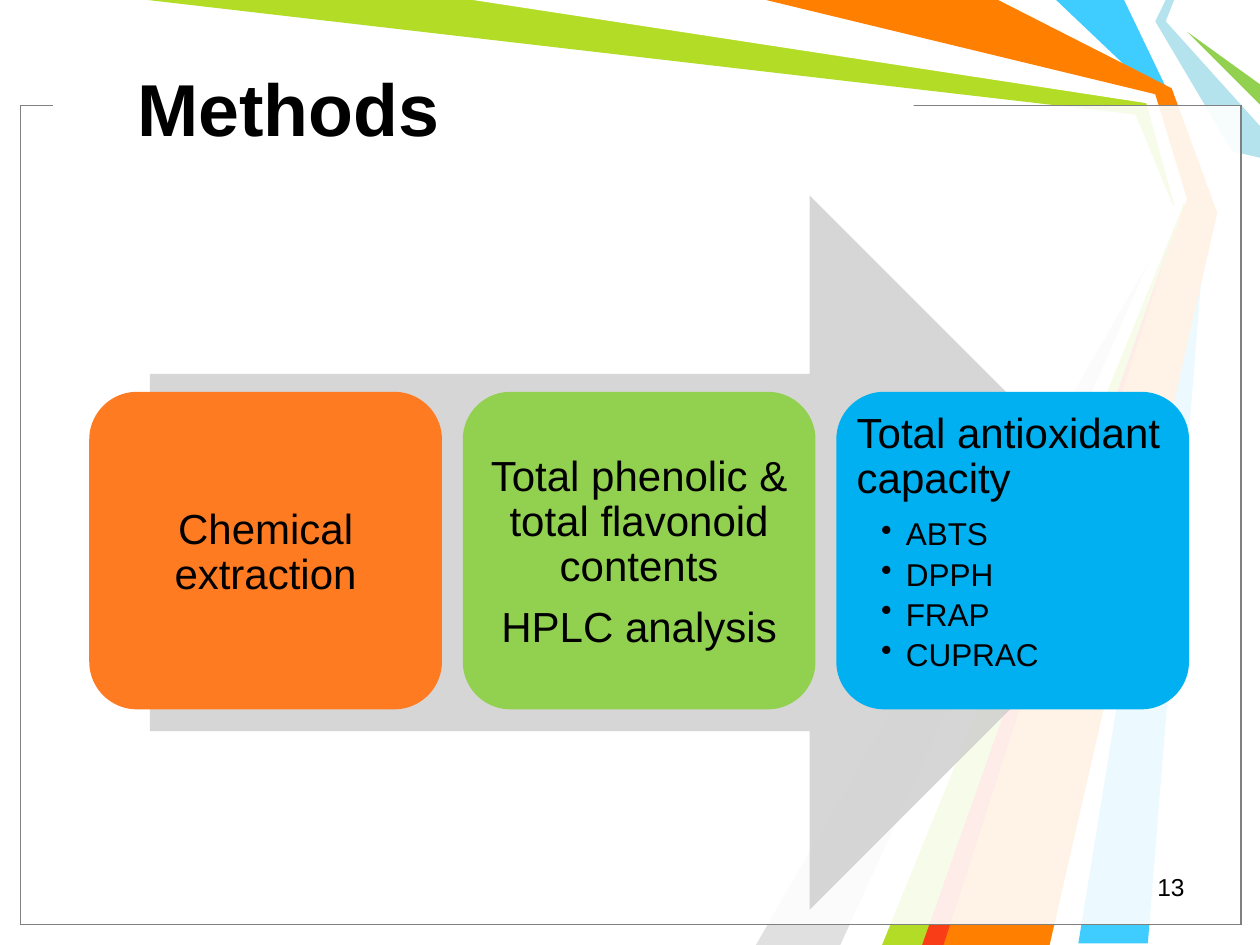
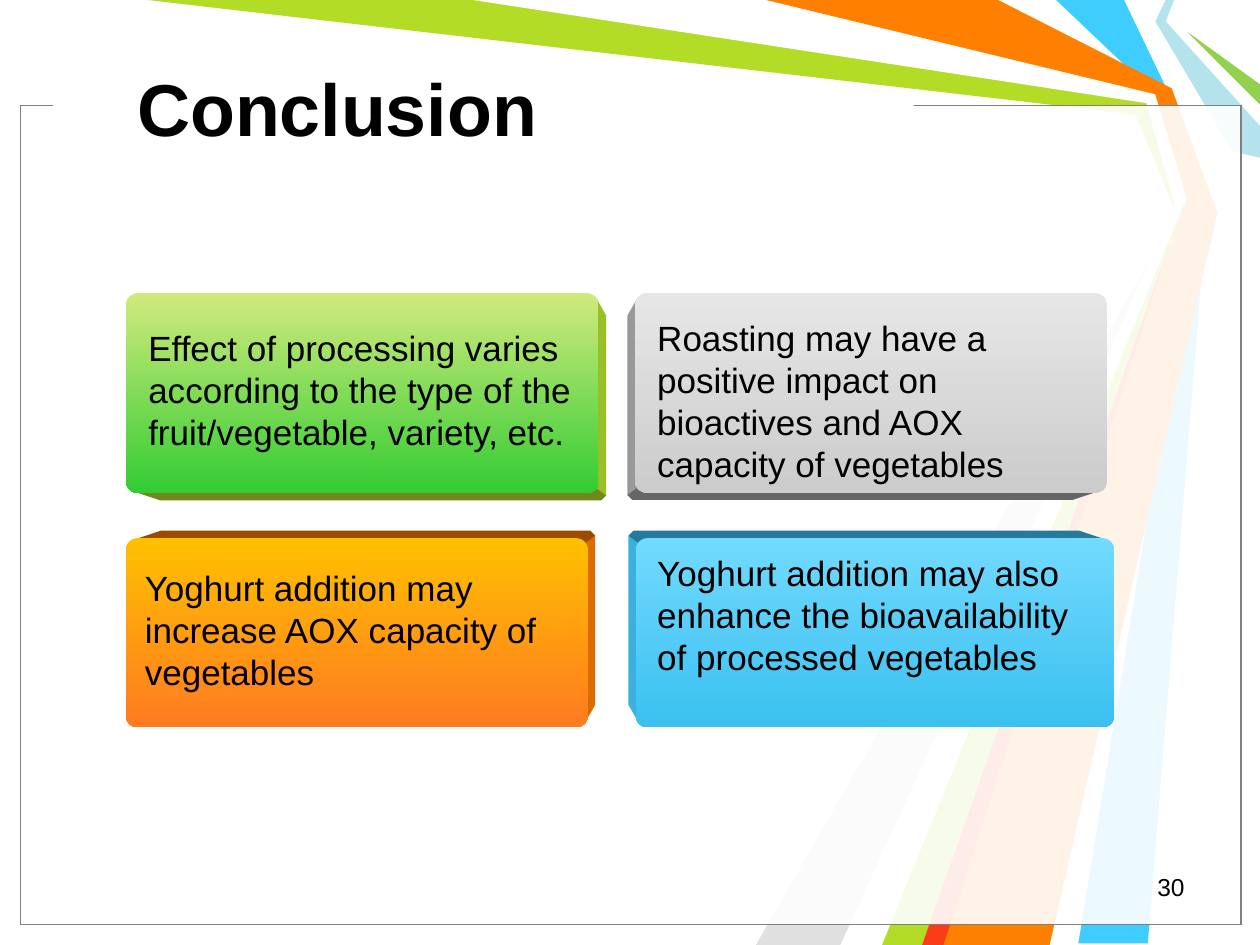
import pptx
import pptx.util
import pptx.dml.color
import pptx.enum.shapes
import pptx.enum.text
import pptx.oxml.ns
from lxml import etree

Cm = pptx.util.Cm
Pt = pptx.util.Pt
Shape = pptx.enum.shapes.MSO_SHAPE
Align = pptx.enum.text.PP_ALIGN
Anchor = pptx.enum.text.MSO_ANCHOR
qn = pptx.oxml.ns.qn


def paint(target, *colors, alpha=None):
    """Fill a shape, line or font with one colour, or two as a downward gradient."""
    rgbs = [pptx.dml.color.RGBColor.from_string(color) for color in colors]
    if len(rgbs) == 2:
        target.fill.gradient()
        target.fill.gradient_angle = 270
        for stop, rgb in zip(target.fill.gradient_stops, rgbs):
            stop.color.rgb = rgb
    else:
        target.fill.solid()
        target.fill.fore_color.rgb = rgbs[0]
    if alpha is not None:
        color_element = target._element.spPr.find(".//" + qn("a:srgbClr"))
        etree.SubElement(color_element, qn("a:alpha"), val=str(alpha * 1000))
    if hasattr(target, "shadow"):
        target.shadow.inherit = False
        target.line.fill.background()


def write(paragraph, text, size, align=Align.LEFT, bold=False):
    paragraph.text = text
    paragraph.alignment = align
    for run in paragraph.runs:
        run.font.name = "Arial"
        run.font.size = Pt(size)
        run.font.bold = bold
        paint(run.font, "000000")


presentation = pptx.Presentation()
presentation.slide_width, presentation.slide_height = Cm(25.4), Cm(19.05)
layout = presentation.slide_layouts[5]

# Titles and page numbers
slides = []
for title_text, number in [("Methods", "13"), ("Conclusion", "30")]:
    slide = presentation.slides.add_slide(layout)
    title = slide.shapes.title
    title.left, title.top, title.width, title.height = Cm(2.51), Cm(0.56), Cm(17.5), Cm(3.18)
    title.text_frame.vertical_anchor = Anchor.MIDDLE
    write(title.text_frame.paragraphs[0], title_text, 42, bold=True)
    number_box = slide.shapes.add_textbox(Cm(18.21), Cm(17.45), Cm(5.92), Cm(0.84))
    number_box.text_frame.word_wrap = True
    write(number_box.text_frame.paragraphs[0], number, 14, Align.RIGHT)
    slides.append(slide)
methods, conclusion = slides

# Background ribbons, from back to front
ribbons = [
    ("3FCDFF", [(22.66, 0), (23.6, 1.96), (24.33, 4.24), (23.14, 19.02),
                (21.74, 19.02), (24.13, 4.24), (23.29, 1.9), (21.29, 0)]),
    ("B3DC27", [(2.97, 0), (9.73, 0), (23.22, 1.98), (23.93, 4.29),
                (18.85, 19.05), (17.58, 19.05), (23.75, 4.39), (22.89, 2.31)]),
    ("E0E0E0", [(16.94, 19.05), (23.55, 4.6), (15.24, 19.05)]),
    ("FFFFFF", [(9.53, 0), (23.11, 2.08), (23.67, 4.11), (17.15, 19.05),
                (17.78, 19.05), (23.9, 4.01), (23.29, 1.9), (15.24, 0)]),
    ("B4E3EE", [(23.5, 0), (23.29, 0.43), (24.84, 3.05), (25.4, 3.18),
                (25.4, 2.54), (23.5, 0.43), (23.67, 0)]),
    ("92D050", [(25.4, 2.11), (23.93, 0.64), (25.4, 1.7)]),
    ("FF7F00", [(15.44, 0), (20.12, 0), (23.62, 1.78), (24.54, 4.29),
                (21.16, 19.05), (18.62, 19.05), (23.93, 4.01), (23.29, 1.9)]),
    ("F93D17", [(18.59, 19.05), (23.67, 4.65), (19.02, 19.05)]),
]
background = []
for color, outline in ribbons:
    points = [(Cm(x), Cm(y)) for x, y in outline]
    builder = methods.shapes.build_freeform(*points[0], scale=1.0)
    builder.add_line_segments(points[1:], close=True)
    ribbon = builder.convert_to_shape()
    paint(ribbon, color)
    background.append(ribbon)

# Two translucent frames, with a gap in their top edge for the title
for line_color in ("000000", "808080"):
    frame = methods.shapes.add_shape(Shape.RECTANGLE, Cm(0.41), Cm(2.13), Cm(24.61), Cm(16.51))
    paint(frame, "FFFFFF", alpha=69)
    paint(frame.line, line_color)
    frame.line.width = Pt(0.75)
    background.append(frame)
title_gap = methods.shapes.add_shape(Shape.RECTANGLE, Cm(1.07), Cm(1.88), Cm(17.35), Cm(0.43))
paint(title_gap, "FFFFFF")
background.append(title_gap)

# Move the background into the layout, so that both slides share it
for position, shape in enumerate(background, start=2):
    layout.shapes._spTree.insert(position, shape._element)

# Methods: process arrow
arrow = methods.shapes.add_shape(Shape.RIGHT_ARROW, Cm(3.02), Cm(3.94), Cm(20.5), Cm(14.4))
paint(arrow, "CCCCCC", alpha=79)

# Methods: three steps, each with its headings and its bullets
steps = [
    ("FF7B21", ["Chemical extraction"], []),
    ("92D050", ["Total phenolic & total flavonoid contents", "HPLC analysis"], []),
    ("00B0F0", ["Total antioxidant capacity"], ["ABTS", "DPPH", "FRAP", "CUPRAC"]),
]
for index, (color, headings, bullets) in enumerate(steps):
    step = methods.shapes.add_shape(
        Shape.ROUNDED_RECTANGLE, Cm(1.8 + 7.53 * index), Cm(7.9), Cm(7.11), Cm(6.4))
    step.adjustments[0] = 0.15
    paint(step, color)
    text_frame = step.text_frame
    text_frame.word_wrap = True
    text_frame.vertical_anchor = Anchor.TOP if bullets else Anchor.MIDDLE
    text_frame.margin_left = text_frame.margin_right = Cm(0.13)
    text_frame.margin_top, text_frame.margin_bottom = Cm(0.13), Cm(0.02)
    for row, text in enumerate(headings + bullets):
        paragraph = text_frame.add_paragraph() if row else text_frame.paragraphs[0]
        is_bullet = row >= len(headings)
        if is_bullet:
            properties = paragraph._p.get_or_add_pPr()
            properties.set("marL", str(Cm(0.99)))
            properties.set("indent", str(-Cm(0.5)))
            etree.SubElement(properties, qn("a:buChar"), char="•")
        paragraph.line_spacing = 0.9
        paragraph.space_after = Pt(3.5 if is_bullet else 9)
        write(paragraph, text, 18 if is_bullet else 24, Align.LEFT if bullets else Align.CENTER)

# Conclusion: cards as (left, top, width, height), gradient, direction of the depth,
# colours of the upright and level depth faces, text place and text
cards = [
    ((2.54, 5.91, 9.53, 4.03), ("D1EA7D", "33CC33"), (1, 1), ("98BF23", "6E8A1C"),
     (2.74, 6.45, 9.3), "Effect of processing varies according to the type of the "
     "fruit/vegetable, variety, etc."),
    ((12.8, 5.91, 9.52, 4.02), ("E6E6E6", "CCCCCC"), (-1, 1), ("999999", "666666"),
     (13.0, 6.25, 9), "Roasting may have a positive impact on bioactives and AOX "
     "capacity of vegetables"),
    ((2.54, 10.85, 9.31, 3.81), ("FFC000", "FF7B21"), (1, -1), ("DD6C00", "994B00"),
     (2.67, 11.3, 9.17), "Yoghurt addition may increase AOX capacity of vegetables"),
    ((12.82, 10.85, 9.64, 3.81), ("71DAFF", "3BC0EF"), (-1, -1), ("3AB0DC", "267A99"),
     (13.0, 11.0, 9.02), "Yoghurt addition may also enhance the bioavailability of "
     "processed vegetables"),
]
depth, radius = 0.15, 0.22
for (left, top, width, height), gradient, (across, down), face_colors, place, text in cards:
    # The near corner is the one the depth shows at; the far corner is opposite
    near_x, far_x = (left + width, left) if across > 0 else (left, left + width)
    near_y, far_y = (top + height, top) if down > 0 else (top, top + height)
    outer_x, outer_y = near_x + across * depth, near_y + down * depth
    inner = (near_x - across * radius, near_y - down * radius)
    upright = [(near_x - across * 0.05, far_y + down * 0.1), (outer_x, far_y + down * 0.45),
               (outer_x, outer_y - down * 0.1), (near_x, near_y), inner]
    level = [(far_x + across * 0.1, near_y - down * 0.05), (far_x + across * 0.7, outer_y),
             (outer_x - across * 0.1, outer_y), (outer_x, outer_y - down * 0.1), inner]
    for face_color, outline in zip(face_colors, (upright, level)):
        points = [(Cm(x), Cm(y)) for x, y in outline]
        builder = conclusion.shapes.build_freeform(*points[0], scale=1.0)
        builder.add_line_segments(points[1:], close=True)
        paint(builder.convert_to_shape(), face_color)

    card = conclusion.shapes.add_shape(
        Shape.ROUNDED_RECTANGLE, Cm(left), Cm(top), Cm(width), Cm(height))
    card.adjustments[0] = 0.06
    paint(card, *gradient)

    text_left, text_top, text_width = place
    text_box = conclusion.shapes.add_textbox(
        Cm(text_left), Cm(text_top), Cm(text_width), Cm(2.82))
    text_box.text_frame.word_wrap = True
    write(text_box.text_frame.paragraphs[0], text, 20)

presentation.save("out.pptx")
